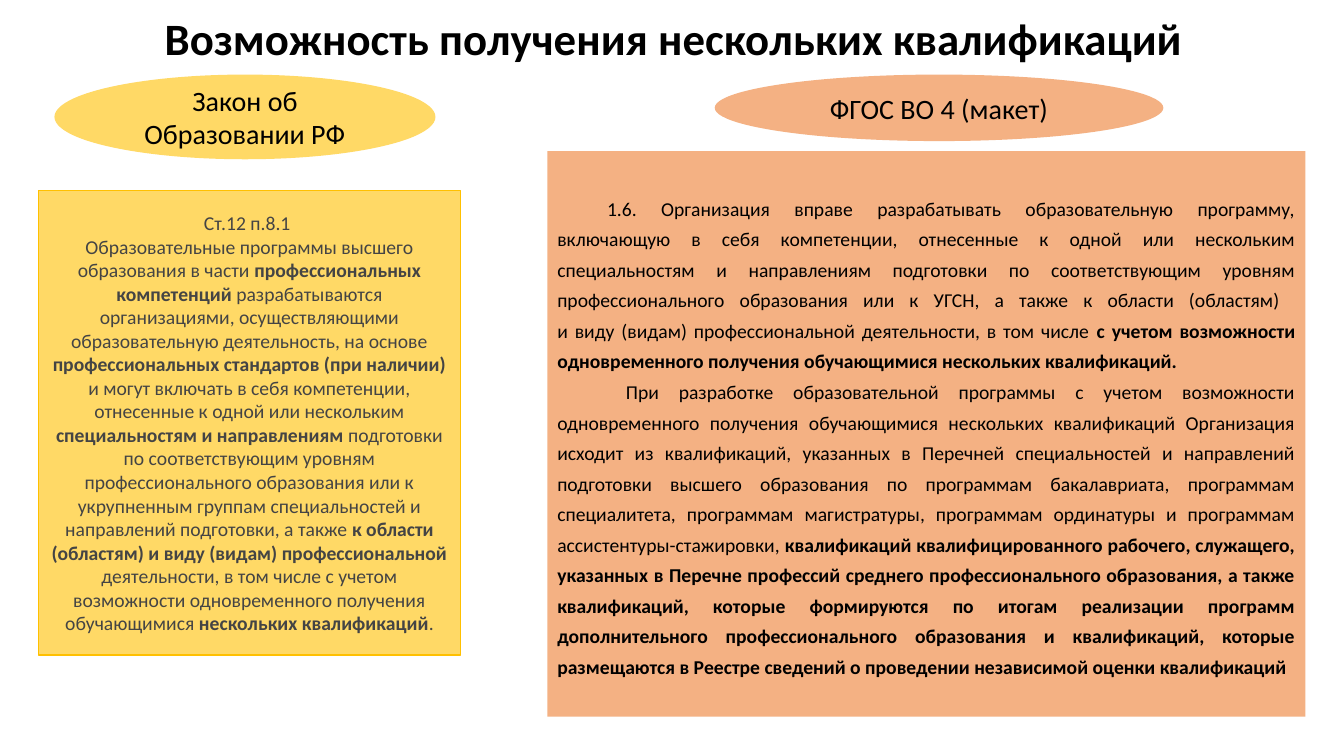
from pptx import Presentation, util as u
from pptx.dml.color import RGBColor
from pptx.enum import shapes, text

presentation = Presentation()
presentation.slide_width = u.Inches(13.33)
presentation.slide_height = u.Inches(7.5)
column = presentation.slide_width / 100
row = presentation.slide_height / 100


def color(value):
    return RGBColor.from_string(value)


def write(shape, *paragraphs, size=14, ink="000000", bold=False,
          align=text.PP_ALIGN.CENTER, spacing=1.0, indents=()):
    frame = shape.text_frame
    frame.word_wrap = True
    frame.auto_size = text.MSO_AUTO_SIZE.NONE
    frame.vertical_anchor = text.MSO_ANCHOR.MIDDLE
    for index, content in enumerate(paragraphs):
        paragraph = frame.add_paragraph() if index else frame.paragraphs[0]
        paragraph.alignment = align
        paragraph.line_spacing = spacing
        if indents:
            properties = paragraph._p.get_or_add_pPr()
            properties.set("marL", "0")
            properties.set("indent", str(round(indents[index] * column)))
        for part, section in enumerate(content.split("**")):
            for number, line in enumerate(section.split("\n")):
                if number:
                    paragraph.add_line_break()
                if not line:
                    continue
                run = paragraph.add_run()
                run.text = line
                run.font.name = "Calibri"
                run.font.size = u.Pt(size)
                run.font.bold = bold or part % 2 == 1
                run.font.color.rgb = color(ink)


slide = presentation.slides.add_slide(presentation.slide_layouts[5])
title = slide.shapes.title
title.left, title.top = round(1.8 * column), round(1.73 * row)
title.width, title.height = round(96.7 * column), round(7.33 * row)
write(title, "Возможность получения нескольких квалификаций",
      size=32, bold=True, spacing=0.9)

law = [
    "Ст.12 п.8.1 ",
    "Образовательные программы высшего образования в части "
    "**профессиональных компетенций **разрабатываются организациями, "
    "осуществляющими образовательную деятельность, на основе "
    "**профессиональных стандартов (при наличии) **и могут включать в себя "
    "компетенции, отнесенные к одной или нескольким **специальностям и "
    "направлениям **подготовки по соответствующим уровням профессионального "
    "образования или к укрупненным группам специальностей и направлений "
    "подготовки, а также **к области (областям) и виду (видам) "
    "профессиональной **деятельности, в том числе с учетом возможности "
    "одновременного получения обучающимися **нескольких квалификаций**.",
]
standard = [
    "1.6. Организация вправе разрабатывать образовательную программу, "
    "включающую в себя компетенции, отнесенные к одной или нескольким "
    "специальностям и направлениям подготовки по соответствующим уровням "
    "профессионального образования или к УГСН, а также к области (областям) \n"
    "и виду (видам) профессиональной деятельности, в том числе **с учетом "
    "возможности одновременного получения обучающимися нескольких "
    "квалификаций.**",
    "При разработке образовательной программы с учетом возможности "
    "одновременного получения обучающимися нескольких квалификаций "
    "Организация исходит из квалификаций, указанных в Перечней специальностей "
    "и направлений подготовки высшего образования по программам бакалавриата, "
    "программам специалитета, программам магистратуры, программам ординатуры "
    "и программам ассистентуры-стажировки, **квалификаций квалифицированного "
    "рабочего, служащего, указанных в Перечне профессий среднего "
    "профессионального образования, а также квалификаций, которые формируются "
    "по итогам реализации программ дополнительного профессионального "
    "образования и квалификаций, которые размещаются в Реестре сведений о "
    "проведении независимой оценки квалификаций**",
]

rectangle = shapes.MSO_SHAPE.RECTANGLE
oval = shapes.MSO_SHAPE.OVAL
yellow, orange = "FFD966", "F4B183"
panels = [
    (rectangle, 2.85, 25.2, 31.43, 61.47, yellow, "FFC000", law,
     dict(ink="444444")),
    (rectangle, 40.73, 20, 56.4, 74.8, orange, None, standard,
     dict(align=text.PP_ALIGN.JUSTIFY, spacing=1.3, indents=(3.7, 5.1))),
    (oval, 4.05, 9.87, 28.35, 11.2, yellow, None,
     ["Закон об Образовании РФ"], dict(size=20)),
    (oval, 53.18, 9.87, 33.38, 8.8, orange, None,
     ["ФГОС ВО 4 (макет)"], dict(size=20)),
]
for kind, left, top, width, height, fill, border, paragraphs, style in panels:
    panel = slide.shapes.add_shape(
        kind, round(left * column), round(top * row),
        round(width * column), round(height * row))
    panel.shadow.inherit = False
    panel.fill.solid()
    panel.fill.fore_color.rgb = color(fill)
    if border:
        panel.line.color.rgb = color(border)
        panel.line.width = u.Pt(1)
    else:
        panel.line.fill.background()
    write(panel, *paragraphs, **style)

presentation.save("out.pptx")
